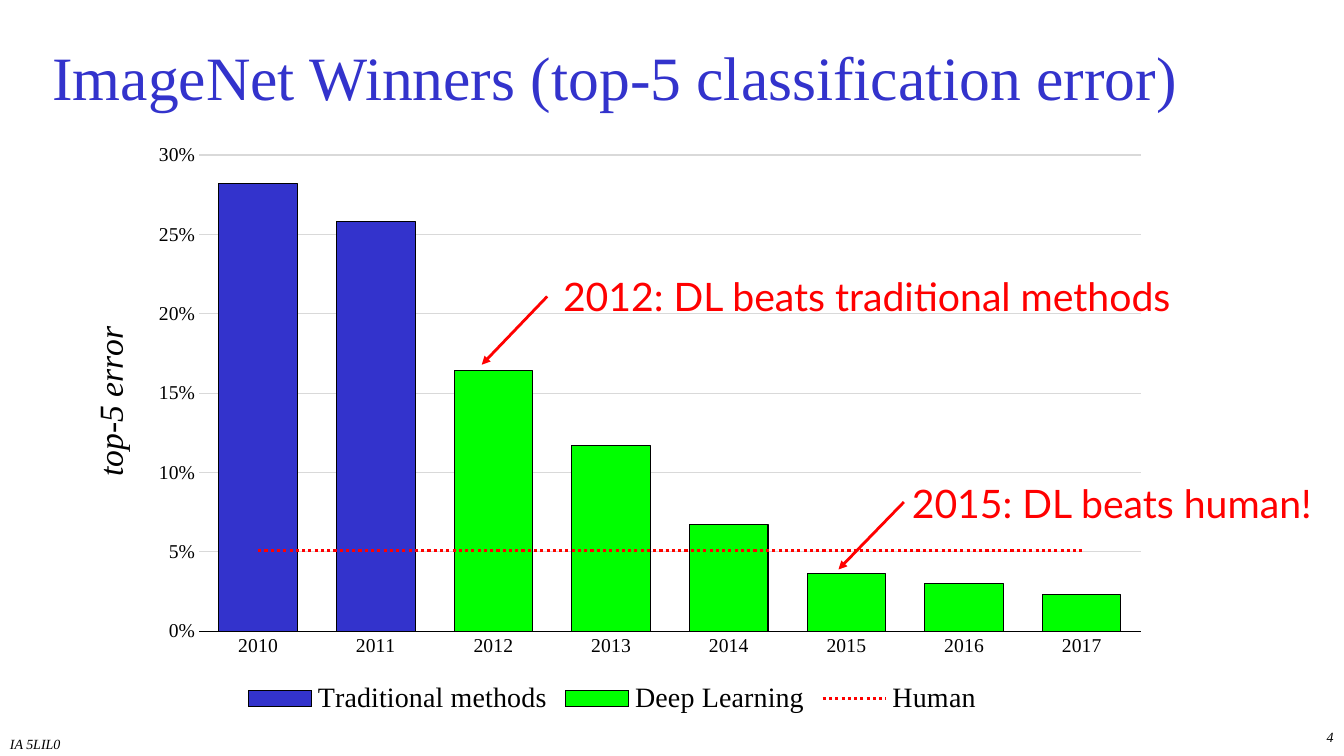
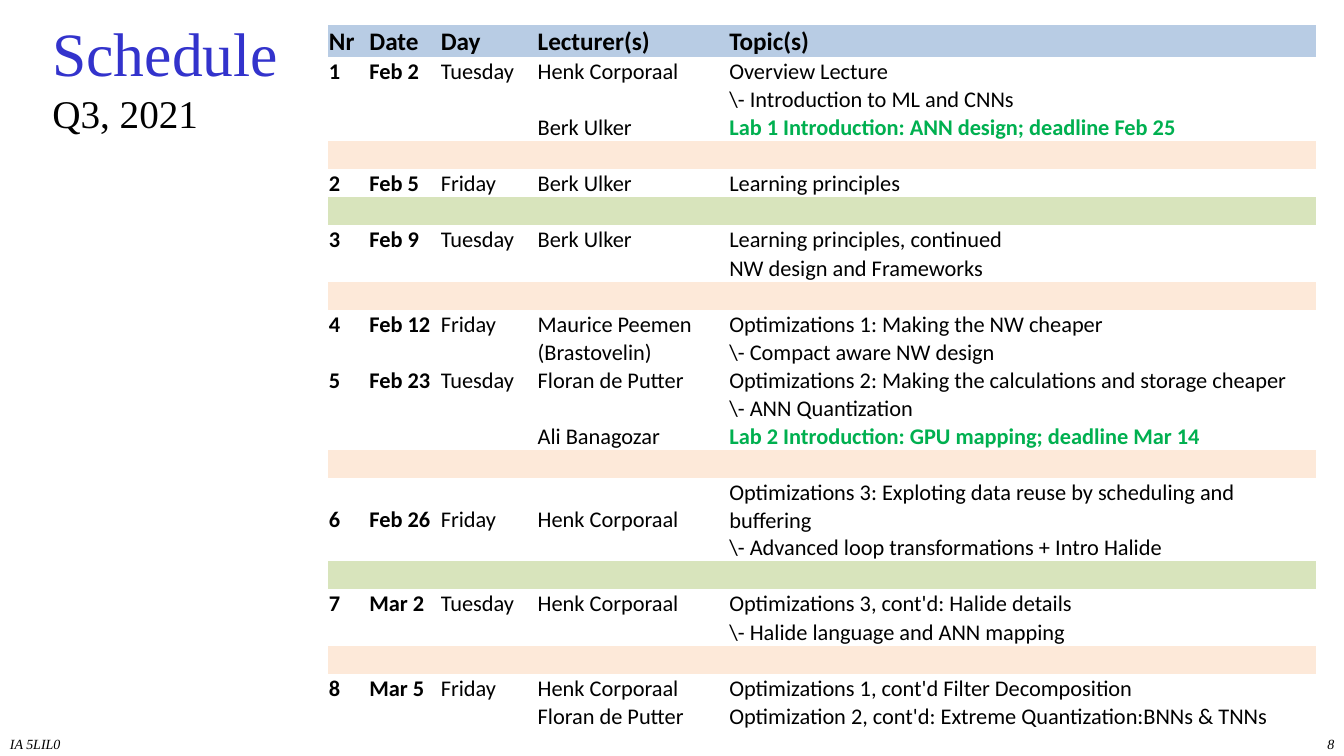
from dataclasses import dataclass

import lxml.etree
import pptx
import pptx.chart.data
import pptx.dml.color
import pptx.enum.chart
import pptx.enum.dml
import pptx.enum.shapes
import pptx.enum.text
import pptx.oxml
import pptx.oxml.ns
import pptx.util

Cm = pptx.util.Cm
Pt = pptx.util.Pt
qn = pptx.oxml.ns.qn

COLORS = {
    "title": "3333CC",
    "text": "000000",
    "paper": "FFFFFF",
    "deep": "00FF00",
    "alert": "FF0000",
    "grid": "D9D9D9",
    "head": "B8CCE4",
    "peach": "FDE9D9",
    "green": "D8E4BC",
    "lab": "00B050",
}
SERIF = "Times New Roman"
NO_GRID_STYLE = "{2D5ABB26-0587-4C30-8999-92F81FD0307C}"
LEFT = pptx.enum.text.PP_ALIGN.LEFT
RIGHT = pptx.enum.text.PP_ALIGN.RIGHT


@dataclass
class Box:
    left: float
    top: float
    width: float
    height: float

    def lengths(self) -> tuple:
        return Cm(self.left), Cm(self.top), Cm(self.width), Cm(self.height)


@dataclass
class Callout:
    text: str
    box: Box
    start: tuple
    end: tuple


@dataclass
class Row:
    nr: str = ""
    date: str = ""
    day: str = ""
    lecturer: str = ""
    topic: str = ""
    fill: str = "paper"
    size: int = 16
    lab: bool = False

    def cells(self) -> tuple:
        return self.nr, self.date, self.day, self.lecturer, self.topic


TITLE_BOX = Box(1.07, 0.64, 31.83, 2.54)
COURSE_BOX = Box(0, 18.42, 7.06, 0.64)

CALLOUTS = [
    Callout("2012: DL beats traditional methods", Box(13.94, 6.73, 16.2, 1.45),
            (13.79, 7.47), (12.14, 9.19)),
    Callout("2015: DL beats human!", Box(22.73, 11.96, 11, 1.45),
            (22.78, 12.65), (21.13, 14.35)),
]

ERRORS = [0.282, 0.258, 0.164, 0.117, 0.067, 0.036, 0.03, 0.023]
FIRST_YEAR = 2010
FIRST_DEEP = 2
HUMAN_ERROR = 0.051

COLUMNS = [1.02, 1.8, 2.44, 4.83, 14.81]
SCHEDULE = [
    Row("Nr", "Date", "Day", "Lecturer(s)", "Topic(s)", fill="head", size=18),
    Row("1", "Feb 2", "Tuesday", "Henk Corporaal", "Overview Lecture"),
    Row(topic="\\- Introduction to ML and CNNs"),
    Row(lecturer="Berk Ulker", lab=True,
        topic="Lab 1 Introduction: ANN design; deadline Feb 25"),
    Row(fill="peach"),
    Row("2", "Feb 5", "Friday", "Berk Ulker", "Learning principles"),
    Row(fill="green"),
    Row("3", "Feb 9", "Tuesday", "Berk Ulker", "Learning principles, continued"),
    Row(topic="NW design and Frameworks"),
    Row(fill="peach"),
    Row("4", "Feb 12", "Friday", "Maurice Peemen",
        "Optimizations 1: Making the NW cheaper"),
    Row(lecturer="(Brastovelin)", topic="\\- Compact aware NW design"),
    Row("5", "Feb 23", "Tuesday", "Floran de Putter",
        "Optimizations 2: Making the calculations and storage cheaper"),
    Row(topic="\\- ANN Quantization"),
    Row(lecturer="Ali Banagozar", lab=True,
        topic="Lab 2 Introduction: GPU mapping; deadline Mar 14"),
    Row(fill="peach"),
    Row("6", "Feb 26", "Friday", "Henk Corporaal",
        "Optimizations 3: Exploting data reuse by scheduling and buffering"),
    Row(topic="\\- Advanced loop transformations + Intro Halide"),
    Row(fill="green"),
    Row("7", "Mar 2", "Tuesday", "Henk Corporaal",
        "Optimizations 3, cont'd: Halide details"),
    Row(topic="\\- Halide language and ANN mapping"),
    Row(fill="peach"),
    Row("8", "Mar 5", "Friday", "Henk Corporaal",
        "Optimizations 1, cont'd Filter Decomposition"),
    Row(lecturer="Floran de Putter",
        topic="Optimization 2, cont'd: Extreme Quantization:BNNs & TNNs"),
]


def rgb(color: str) -> pptx.dml.color.RGBColor:
    return pptx.dml.color.RGBColor.from_string(COLORS[color])


def set_font(font, size: float, color: str = "text", name: str = SERIF,
             bold: bool = False, italic: bool = False) -> None:
    font.name = name
    font.size = Pt(size)
    font.bold = bold
    font.italic = italic
    font.color.rgb = rgb(color)


def set_line(line, color: str, width: float) -> None:
    line.color.rgb = rgb(color)
    line.width = Pt(width)


def add_text(slide, box: Box, text: str, size: float, color: str = "text",
             name: str = SERIF, italic: bool = False, align=LEFT):
    tf = slide.shapes.add_textbox(*box.lengths()).text_frame
    tf.word_wrap = True
    p = tf.paragraphs[0]
    p.alignment = align
    p.add_run().text = text
    set_font(p.font, size, color, name, italic=italic)
    return tf


def add_slide(prs, title: str, number: str, number_box: Box, subtitle: str = ""):
    slide = prs.slides.add_slide(prs.slide_layouts[6])
    tf = add_text(slide, TITLE_BOX, title, 44, "title")
    tf.vertical_anchor = pptx.enum.text.MSO_ANCHOR.MIDDLE
    if subtitle:
        p = tf.paragraphs[0]
        p.add_line_break()
        r = p.add_run()
        r.text = subtitle
        set_font(r.font, 28)
    add_text(slide, COURSE_BOX, "IA 5LIL0", 10, italic=True)
    add_text(slide, number_box, number, 10, italic=True, align=RIGHT)
    return slide


def set_layout(parent, index: int, **values: object) -> None:
    for old in parent.findall(qn("c:layout")):
        parent.remove(old)
    layout = lxml.etree.Element(qn("c:layout"))
    manual = lxml.etree.SubElement(layout, qn("c:manualLayout"))
    for tag, value in values.items():
        lxml.etree.SubElement(manual, qn(f"c:{tag}"), val=str(value))
    parent.insert(index, layout)


def move_to_line_chart(chart) -> None:
    bars = chart.plots[0]
    bar_chart = bars._element
    ser = bars.series[2]._element
    for flag in ser.findall(qn("c:invertIfNegative")):
        ser.remove(flag)
    line_chart = pptx.oxml.parse_xml(
        f'<c:lineChart {pptx.oxml.ns.nsdecls("c")}>'
        '<c:grouping val="standard"/><c:varyColors val="0"/></c:lineChart>')
    line_chart.append(ser)
    lxml.etree.SubElement(line_chart, qn("c:marker"), val="1")
    for axis in bar_chart.findall(qn("c:axId")):
        lxml.etree.SubElement(line_chart, qn("c:axId"), val=axis.get("val"))
    bar_chart.addnext(line_chart)
    human = chart.plots[1].series[0]
    human.smooth = False
    human.marker.style = pptx.enum.chart.XL_MARKER_STYLE.NONE
    set_line(human.format.line, "alert", 2.25)
    human.format.line.dash_style = pptx.enum.dml.MSO_LINE.ROUND_DOT


def style_axes(chart) -> None:
    for axis in (chart.category_axis, chart.value_axis):
        axis.major_tick_mark = pptx.enum.chart.XL_TICK_MARK.NONE
        axis.minor_tick_mark = pptx.enum.chart.XL_TICK_MARK.NONE
        set_font(axis.tick_labels.font, 14)
    set_line(chart.category_axis.format.line, "text", 0.75)
    axis = chart.value_axis
    axis.minimum_scale, axis.maximum_scale, axis.major_unit = 0, 0.3, 0.05
    axis.format.line.fill.background()
    axis.has_major_gridlines = True
    set_line(axis.major_gridlines.format.line, "grid", 0.75)
    axis.tick_labels.number_format = "0%"
    axis.tick_labels.number_format_is_linked = False
    title = axis.axis_title
    tf = title.text_frame
    tf.text = "top-5 error"
    set_font(tf.paragraphs[0].font, 24, italic=True)
    tf._txBody.find(qn("a:bodyPr")).set("rot", "-5400000")
    set_layout(title._element, 1, xMode="edge", yMode="edge", x=0.02, y=0.32)


def add_error_chart(slide) -> None:
    data = pptx.chart.data.CategoryChartData(number_format="0.0%")
    data.categories = [str(FIRST_YEAR + i) for i in range(len(ERRORS))]
    data.add_series("Traditional methods", ERRORS)
    data.add_series("Deep Learning", [0])
    data.add_series("Human", [HUMAN_ERROR] * len(ERRORS))
    chart = slide.shapes.add_chart(
        pptx.enum.chart.XL_CHART_TYPE.COLUMN_CLUSTERED,
        *Box(1.52, 3.33, 27.81, 14.81).lengths(), data).chart
    chart.has_title = False
    set_font(chart.font, 10)
    move_to_line_chart(chart)
    bars = chart.plots[0]
    bars.gap_width, bars.overlap, bars.vary_by_categories = 50, 100, False
    traditional, deep = bars.series
    points = [traditional.points[i] for i in range(FIRST_DEEP, len(ERRORS))]
    for item in (traditional, deep, *points):
        item.format.fill.solid()
        item.format.fill.fore_color.rgb = rgb("title" if item is traditional else "deep")
        set_line(item.format.line, "text", 0.75)
    style_axes(chart)
    chart.has_legend = True
    chart.legend.position = pptx.enum.chart.XL_LEGEND_POSITION.BOTTOM
    chart.legend.include_in_layout = False
    set_font(chart.legend.font, 20)
    plot_area = bars._element.getparent()
    set_layout(plot_area, 0, layoutTarget="inner", xMode="edge", yMode="edge",
               x=0.126, y=0.039, w=0.853, h=0.81)


def add_callout(slide, callout: Callout) -> None:
    points = [Cm(v) for v in callout.start + callout.end]
    arrow = slide.shapes.add_connector(
        pptx.enum.shapes.MSO_CONNECTOR.STRAIGHT, *points)
    set_line(arrow.line, "alert", 2)
    lxml.etree.SubElement(arrow.line._get_or_add_ln(), qn("a:tailEnd"), type="triangle")
    lxml.etree.SubElement(arrow._element.spPr, qn("a:effectLst"))
    add_text(slide, callout.box, callout.text, 28, "alert", "Lato")


def add_schedule(slide) -> None:
    box = Box(8.26, 0.64, sum(COLUMNS), 0.69 * len(SCHEDULE))
    table = slide.shapes.add_table(len(SCHEDULE), len(COLUMNS), *box.lengths()).table
    table.first_row = table.horz_banding = False
    table._tbl.tblPr.find(qn("a:tableStyleId")).text = NO_GRID_STYLE
    for column, width in zip(table.columns, COLUMNS):
        column.width = Cm(width)
    for i, row in enumerate(SCHEDULE):
        table.rows[i].height = Cm(0.76 if row.fill == "head" else 0.69)
        for j, text in enumerate(row.cells()):
            cell = table.cell(i, j)
            cell.margin_left = cell.margin_right = cell.margin_top = Cm(0.03)
            cell.margin_bottom = 0
            cell.vertical_anchor = pptx.enum.text.MSO_ANCHOR.BOTTOM
            cell.fill.solid()
            cell.fill.fore_color.rgb = rgb(row.fill)
            lab = row.lab and j == len(COLUMNS) - 1
            p = cell.text_frame.paragraphs[0]
            set_font(p.font, row.size, "lab" if lab else "text", "Calibri",
                     bold=lab or j < 2 or row.fill == "head")
            if text:
                p.add_run().text = text
            else:
                lxml.etree.SubElement(p._p, qn("a:endParaRPr"), sz=str(row.size * 100))


def main() -> None:
    prs = pptx.Presentation()
    prs.slide_width, prs.slide_height = Cm(33.87), Cm(19.05)

    slide = add_slide(prs, "ImageNet Winners (top-5 classification error)", "4",
                      Box(26.24, 18.24, 7.62, 0.81))
    add_error_chart(slide)
    for callout in CALLOUTS:
        add_callout(slide, callout)

    slide = add_slide(prs, "Schedule", "8", Box(26.82, 18.42, 7.06, 0.64), "Q3, 2021")
    add_schedule(slide)
    prs.save("out.pptx")


if __name__ == "__main__":
    main()
